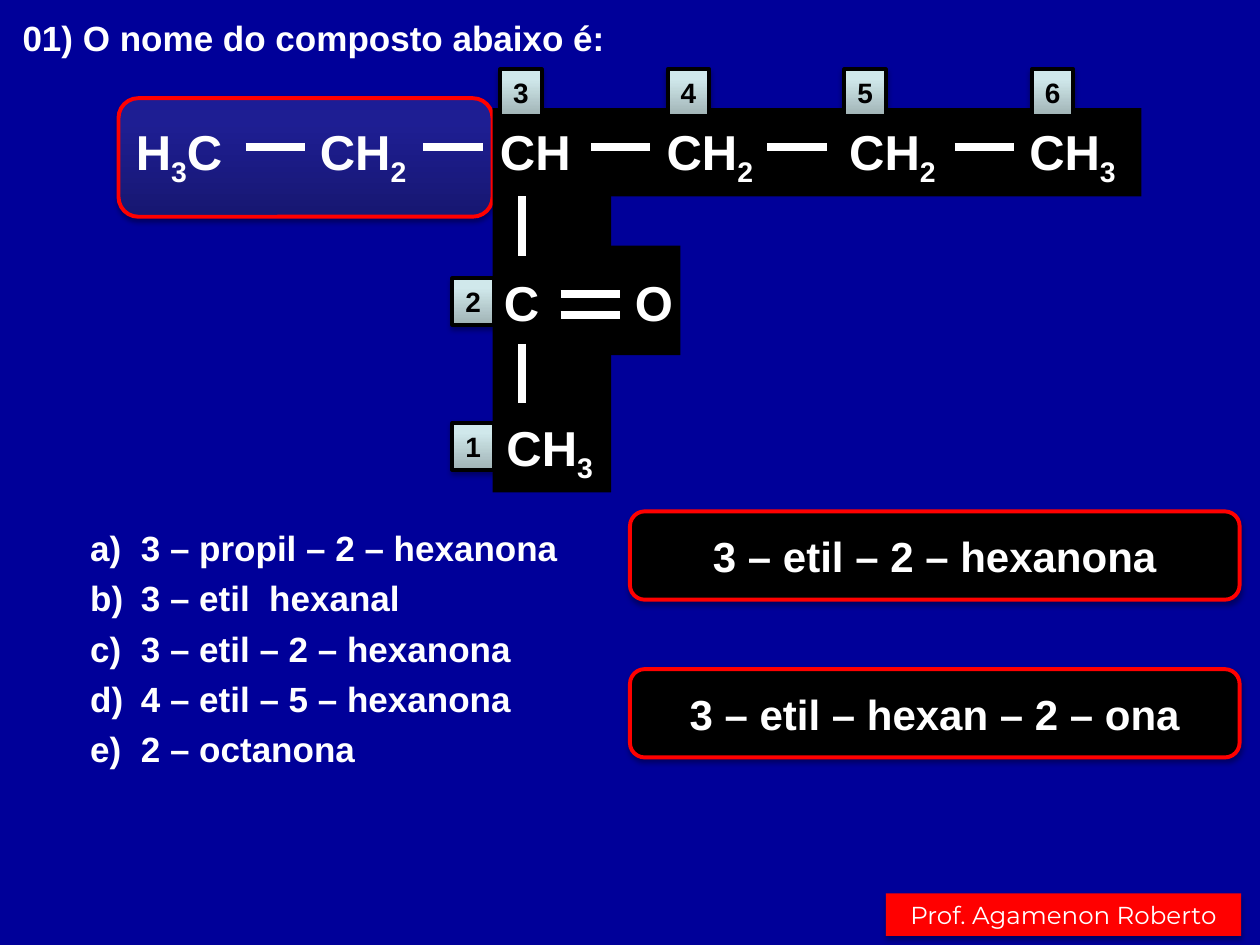
"""Build a quiz slide on naming a branched ketone."""
from dataclasses import dataclass
from itertools import groupby

from lxml import etree
from pptx import Presentation
from pptx.dml import color
from pptx.enum import shapes, text
from pptx.oxml import ns
from pptx.util import Cm, Pt


@dataclass(frozen=True)
class Theme:
    """Colours, fonts and sizes of the slide."""
    background: str = "000099"
    ink: str = "FFFFFF"
    dark: str = "000000"
    accent: str = "FF0000"
    branch: tuple = ((0, "171771"), (80, "1E1E93"), (100, "1C1C96"))
    badge: tuple = ((0, "A0B3B5"), (80, "D0E8EB"), (100, "D1EAEC"))
    font: str = "Arial"
    credit_font: str = "Montserrat"
    body: int = 20
    formula: int = 28
    name: int = 24
    number: int = 16
    credit: int = 14
    outline: float = 2.25
    bond: float = 4.5


THEME = Theme()
RECT = shapes.MSO_SHAPE.RECTANGLE
ROUNDED = shapes.MSO_SHAPE.ROUNDED_RECTANGLE
BADGE_TOP = 1.4
BADGE_LEFT = 9.12
CHAIN_TOP = 2.44
BOND_LENGTH = 1.2


def rgb(code):
    """Turn a hex code into a colour."""
    return color.RGBColor.from_string(code)


def style_runs(paragraph, size, ink=THEME.ink, font=THEME.font, bold=True):
    """Format every run of a paragraph."""
    for run in paragraph.runs:
        run.font.size = Pt(size)
        run.font.name = font
        run.font.bold = bold
        run.font.color.rgb = rgb(ink)


def fill_gradient(shape, stops):
    """Fill a shape from bottom to top with the given stops."""
    shape.fill.gradient()
    shape.fill.gradient_angle = 90
    stop_list = shape._element.spPr.find(ns.qn("a:gradFill")).find(ns.qn("a:gsLst"))
    for old in list(stop_list):
        stop_list.remove(old)
    for position, code in stops:
        stop = etree.SubElement(stop_list, ns.qn("a:gs"), pos=str(position * 1000))
        etree.SubElement(stop, ns.qn("a:srgbClr"), val=code)


def add_shadow(shape):
    """Give a shape a soft shadow straight below it."""
    effects = shape._element.spPr.find(ns.qn("a:effectLst"))
    shadow = etree.SubElement(effects, ns.qn("a:outerShdw"), blurRad=str(Pt(3.1)),
                              dist=str(Pt(1.8)), dir="5400000", rotWithShape="0")
    tint = etree.SubElement(shadow, ns.qn("a:srgbClr"), val=THEME.dark)
    etree.SubElement(tint, ns.qn("a:alpha"), val="35000")


def add_panel(slide, box, fill, outline=None, kind=RECT, shadow=True):
    """Add a filled panel, with a gradient when the fill is a tuple."""
    panel = slide.shapes.add_shape(kind, *map(Cm, box))
    panel.shadow.inherit = False
    if isinstance(fill, tuple):
        fill_gradient(panel, fill)
    else:
        panel.fill.solid()
        panel.fill.fore_color.rgb = rgb(fill)
    if outline:
        panel.line.color.rgb = rgb(outline)
        panel.line.width = Pt(THEME.outline)
    else:
        panel.line.fill.background()
    if shadow:
        add_shadow(panel)
    return panel


def label(panel, words, size, **style):
    """Write one centred line in a panel."""
    frame = panel.text_frame
    frame.text = words
    frame.word_wrap = False
    frame.paragraphs[0].alignment = text.PP_ALIGN.CENTER
    style_runs(frame.paragraphs[0], size, **style)


def add_badge(slide, number, left, top):
    """Add a numbered carbon badge."""
    badge = add_panel(slide, (left, top, 0.84, 0.94), THEME.badge, THEME.dark)
    label(badge, str(number), THEME.number, ink=THEME.dark)


def add_name(slide, name, top):
    """Add a framed compound name."""
    frame = add_panel(slide, (12.7, top, 12.29, 1.78), THEME.dark, THEME.accent, ROUNDED)
    label(frame, name, THEME.name)


def add_atoms(slide, formula, left, top):
    """Add an atom group with its digits as subscripts."""
    atoms = slide.shapes.add_textbox(Cm(left), Cm(top), Cm(0.8 * len(formula)), Cm(1.2))
    frame = atoms.text_frame
    frame.word_wrap = True
    frame.margin_left = frame.margin_right = frame.margin_top = frame.margin_bottom = 0
    paragraph = frame.paragraphs[0]
    for is_digit, letters in groupby(formula, str.isdigit):
        run = paragraph.add_run()
        run.text = "".join(letters)
        if is_digit:
            run._r.get_or_add_rPr().set("baseline", "-25000")
    style_runs(paragraph, THEME.formula)


def add_bond(slide, left, top, upright=False):
    """Add one stroke of a chemical bond."""
    end = (left, top + BOND_LENGTH) if upright else (left + BOND_LENGTH, top)
    bond = slide.shapes.add_connector(shapes.MSO_CONNECTOR.STRAIGHT,
                                      *map(Cm, (left, top, *end)))
    bond.line.color.rgb = rgb(THEME.ink)
    bond.line.width = Pt(THEME.bond)
    etree.SubElement(bond._element.spPr, ns.qn("a:effectLst"))


def add_question(slide, question):
    """Place the question in the title placeholder."""
    title = slide.shapes.title
    title.left, title.top, title.width, title.height = map(Cm, (0.2, 0.2, 12.34, 1.12))
    frame = title.text_frame
    frame.text = question
    frame.word_wrap = False
    frame.vertical_anchor = text.MSO_ANCHOR.MIDDLE
    frame.paragraphs[0].alignment = text.PP_ALIGN.LEFT
    style_runs(frame.paragraphs[0], THEME.body)


def add_answers(slide, answers):
    """List the lettered answers with a hanging indent."""
    box = slide.shapes.add_textbox(Cm(1.57), Cm(10.29), Cm(10.21), Cm(5.38))
    frame = box.text_frame
    frame.word_wrap = True
    frame.vertical_anchor = text.MSO_ANCHOR.MIDDLE
    frame.text = "\n".join(f"{letter})\t{answer}" for letter, answer in zip("abcde", answers))
    for paragraph in frame.paragraphs:
        paragraph.line_spacing = 1.2
        properties = paragraph._p.get_or_add_pPr()
        properties.set("marL", str(Cm(1.02)))
        properties.set("indent", str(-Cm(1.02)))
        style_runs(paragraph, THEME.body)


def add_molecule(slide):
    """Draw the highlighted chain, its numbering, atoms and bonds."""
    add_panel(slide, (2.39, 1.98, 7.54, 2.39), THEME.branch, THEME.accent, ROUNDED)
    for box in ((11.71, 2.18, 11.3, 1.78), (12.12, 4.95, 1.6, 2.21), (9.93, 2.18, 2.39, 7.75)):
        add_panel(slide, box, THEME.dark, shadow=False)
    for number, top in ((1, 8.53), (2, 5.61)):
        add_badge(slide, number, BADGE_LEFT, top)
    for number, left in enumerate((10.08, 13.46, 17.02, 20.8), start=3):
        add_badge(slide, number, left, BADGE_TOP)
    chain = ("H3C", "CH2", "CH", "CH2", "CH2", "CH3")
    for formula, left in zip(chain, (2.74, 6.45, 10.08, 13.44, 17.12, 20.75)):
        add_atoms(slide, formula, left, CHAIN_TOP)
    for formula, left, top in (("C", 10.16, 5.49), ("O", 12.8, 5.49), ("CH3", 10.21, 8.41)):
        add_atoms(slide, formula, left, top)
    for left in (4.95, 8.53, 11.91, 15.47, 19.25):
        add_bond(slide, left, 2.97)
    for top in (3.96, 6.93):
        add_bond(slide, 10.52, top, upright=True)
    for top in (5.92, 6.35):
        add_bond(slide, 11.3, top)


def main():
    """Build and save the slide."""
    deck = Presentation()
    deck.slide_width, deck.slide_height = Cm(25.4), Cm(19.05)
    slide = deck.slides.add_slide(deck.slide_layouts[5])
    slide.background.fill.solid()
    slide.background.fill.fore_color.rgb = rgb(THEME.background)
    add_question(slide, "01) O nome do composto abaixo é:")
    add_molecule(slide)
    add_answers(slide, ("3 – propil – 2 – hexanona", "3 – etil  hexanal",
                        "3 – etil – 2 – hexanona", "4 – etil – 5 – hexanona",
                        "2 – octanona"))
    add_name(slide, "3 – etil – 2 – hexanona", 10.31)
    add_name(slide, "3 – etil – hexan – 2 – ona", 13.49)
    credit = add_panel(slide, (17.86, 18.01, 7.16, 0.86), THEME.accent)
    label(credit, "Prof. Agamenon Roberto", THEME.credit, font=THEME.credit_font, bold=False)
    deck.save("out.pptx")


if __name__ == "__main__":
    main()
